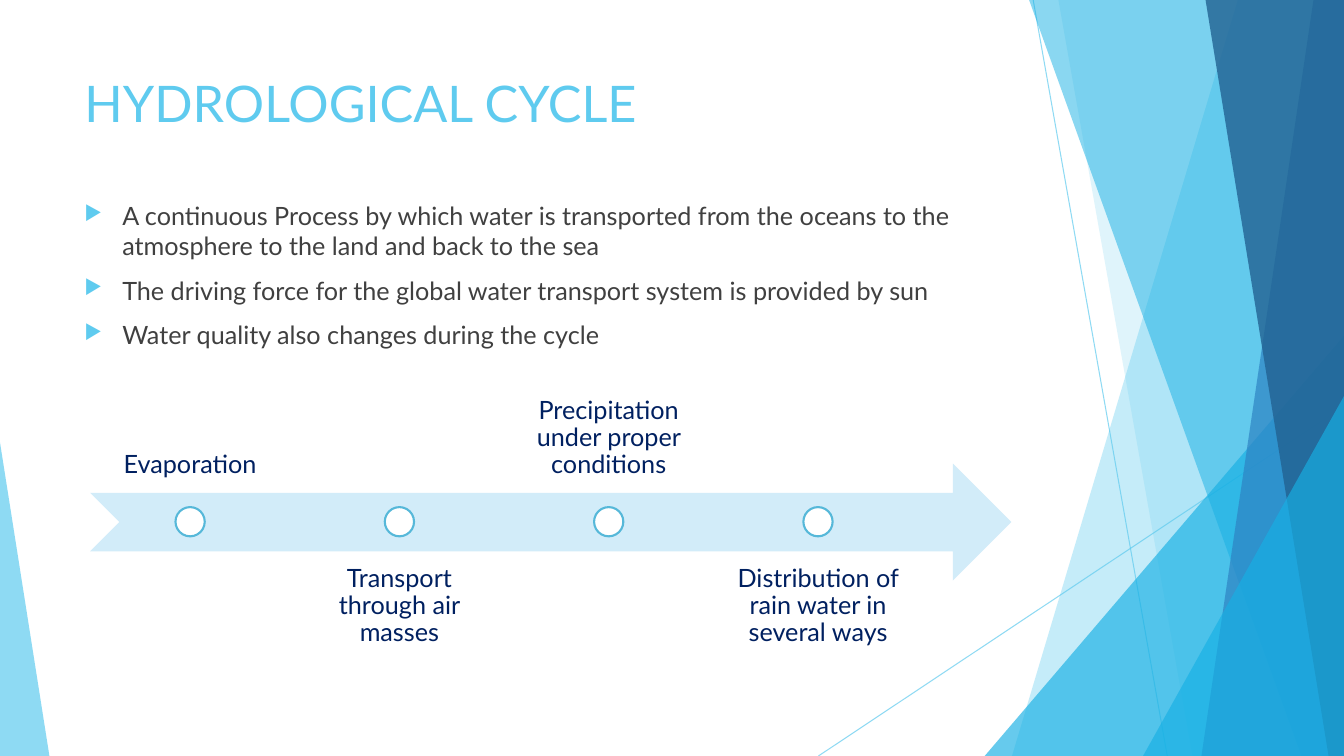
"""Build the hydrological cycle slide."""
from pptx import Presentation
from pptx.dml.color import RGBColor
from pptx.enum.shapes import MSO_CONNECTOR, MSO_SHAPE as Preset
from pptx.enum.text import MSO_ANCHOR as Anchor, PP_ALIGN as Align
from pptx.oxml.ns import qn
from pptx.util import Pt
from lxml.etree import SubElement

WIDTH, HEIGHT = 960, 540
SKY, CYAN, BLUE, NAVY = "5FCBEF", "17B0E4", "2E83C3", "226292"

LINES = [(738, 0, 833.8, HEIGHT), (WIDTH, 290.2, 584.6, HEIGHT)]
LIGHT_PANELS = [(884.2, 722.9, SKY, 36), (756, 851.8, SKY, 20)]
DARK_PANELS = [
    (735.1, 929.5, CYAN, 50),
    (938.2, 858.2, BLUE, 70),
    (861.1, 949, NAVY, 80),
]
BULLETS = [
    "A continuous Process by which water is transported from the oceans to the "
    "atmosphere to the land and back to the sea",
    "The driving force for the global water transport system is provided by sun",
    "Water quality also changes during the cycle",
]
STAGES = [
    "Evaporation",
    "Transport through air masses",
    "Precipitation under proper conditions",
    "Distribution of rain water in several ways",
]


def color(value):
    return RGBColor.from_string(value)


def set_opacity(element, percent):
    for node in element.iter(qn("a:srgbClr")):
        SubElement(node, qn("a:alpha"), val=str(percent * 1000))


def add_bullet(paragraph, value):
    properties = paragraph._p.get_or_add_pPr()
    properties.set("marL", str(Pt(27)))
    properties.set("indent", str(Pt(-27)))
    bullet_color = SubElement(properties, qn("a:buClr"))
    SubElement(bullet_color, qn("a:srgbClr"), val=value)
    SubElement(properties, qn("a:buSzPct"), val="80000")
    SubElement(properties, qn("a:buChar"), char="▶")


def write(frame, texts, size=18, fill="404040", align=Align.LEFT, before=0,
          spacing=None, bullet=None):
    for index, text in enumerate(texts):
        paragraph = frame.paragraphs[0] if index == 0 else frame.add_paragraph()
        paragraph.alignment = align
        paragraph.space_before = Pt(before)
        paragraph.line_spacing = spacing
        if bullet:
            add_bullet(paragraph, bullet)
        run = paragraph.add_run()
        run.text = text
        run.font.name = "Lato"
        run.font.size = Pt(size)
        run.font.color.rgb = color(fill)


class Deck:
    def __init__(self):
        self.presentation = Presentation()
        self.presentation.slide_width = Pt(WIDTH)
        self.presentation.slide_height = Pt(HEIGHT)
        self.slide = self.presentation.slides.add_slide(
            self.presentation.slide_layouts[6])
        self.shapes = self.slide.shapes

    def finish(self, shape, fill, opacity=100, line=None):
        shape.shadow.inherit = False
        shape.fill.solid()
        shape.fill.fore_color.rgb = color(fill)
        if opacity < 100:
            set_opacity(shape.element.spPr, opacity)
        if line:
            shape.line.color.rgb = color(line)
            shape.line.width = Pt(1.5)
        else:
            shape.line.fill.background()

    def line(self, x1, y1, x2, y2):
        connector = self.shapes.add_connector(
            MSO_CONNECTOR.STRAIGHT, Pt(x1), Pt(y1), Pt(x2), Pt(y2))
        connector.line.color.rgb = color(SKY)
        connector.line.width = Pt(0.75)
        set_opacity(connector.element.spPr, 70)
        SubElement(connector.element.spPr, qn("a:effectLst"))

    def panel(self, top_x, bottom_x, fill, opacity):
        builder = self.shapes.build_freeform(Pt(top_x), 0)
        corners = [(WIDTH, 0), (WIDTH, HEIGHT), (bottom_x, HEIGHT)]
        builder.add_line_segments([(Pt(x), Pt(y)) for x, y in corners])
        self.finish(builder.convert_to_shape(), fill, opacity)

    def shape(self, preset, left, top, width, height, fill, opacity=100, line=None):
        shape = self.shapes.add_shape(
            preset, Pt(left), Pt(top), Pt(width), Pt(height))
        self.finish(shape, fill, opacity, line)
        return shape

    def triangle(self, left, top, width, fill, opacity, apex):
        shape = self.shape(Preset.ISOSCELES_TRIANGLE, left, top, width,
                           HEIGHT - top, fill, opacity)
        shape.adjustments[0] = apex

    def text(self, texts, left, top, width, height, anchor=Anchor.TOP,
             inset=None, **style):
        box = self.shapes.add_textbox(Pt(left), Pt(top), Pt(width), Pt(height))
        frame = box.text_frame
        frame.word_wrap = True
        frame.vertical_anchor = anchor
        if inset is not None:
            frame.margin_left = frame.margin_right = Pt(inset)
            frame.margin_top = frame.margin_bottom = Pt(inset)
        write(frame, texts, **style)

    def stage(self, index, label):
        center = 135.8 + 149.5 * index
        above = index % 2 == 0
        self.text([label], center - 71.3, 268.6 if above else 393.8, 142.6, 83.5,
                  anchor=Anchor.BOTTOM if above else Anchor.TOP, inset=10,
                  fill="002060", align=Align.CENTER, spacing=0.9)
        self.shape(Preset.OVAL, center - 10.45, 362.2, 20.9, 20.9, "FFFFFF",
                   line="56B8D9")


def main():
    deck = Deck()
    for ends in LINES:
        deck.line(*ends)
    for panel in LIGHT_PANELS:
        deck.panel(*panel)
    deck.triangle(703.4, 239.8, 256.6, CYAN, 66, apex=1)
    for panel in DARK_PANELS:
        deck.panel(*panel)
    deck.triangle(816.5, 283, 143.5, CYAN, 66, apex=1)
    deck.triangle(0, 316.1, 35.3, SKY, 70, apex=0)

    deck.text(["HYDROLOGICAL CYCLE"], 53.3, 48, 676.8, 104, size=36, fill=SKY)
    deck.text(BULLETS, 53.3, 139.7, 676.8, 305.3, before=10, bullet=SKY)

    deck.shape(Preset.NOTCHED_RIGHT_ARROW, 64.4, 331.2, 658, 83.5, "D2ECF9")
    for index, label in enumerate(STAGES):
        deck.stage(index, label)
    deck.presentation.save("out.pptx")


if __name__ == "__main__":
    main()
